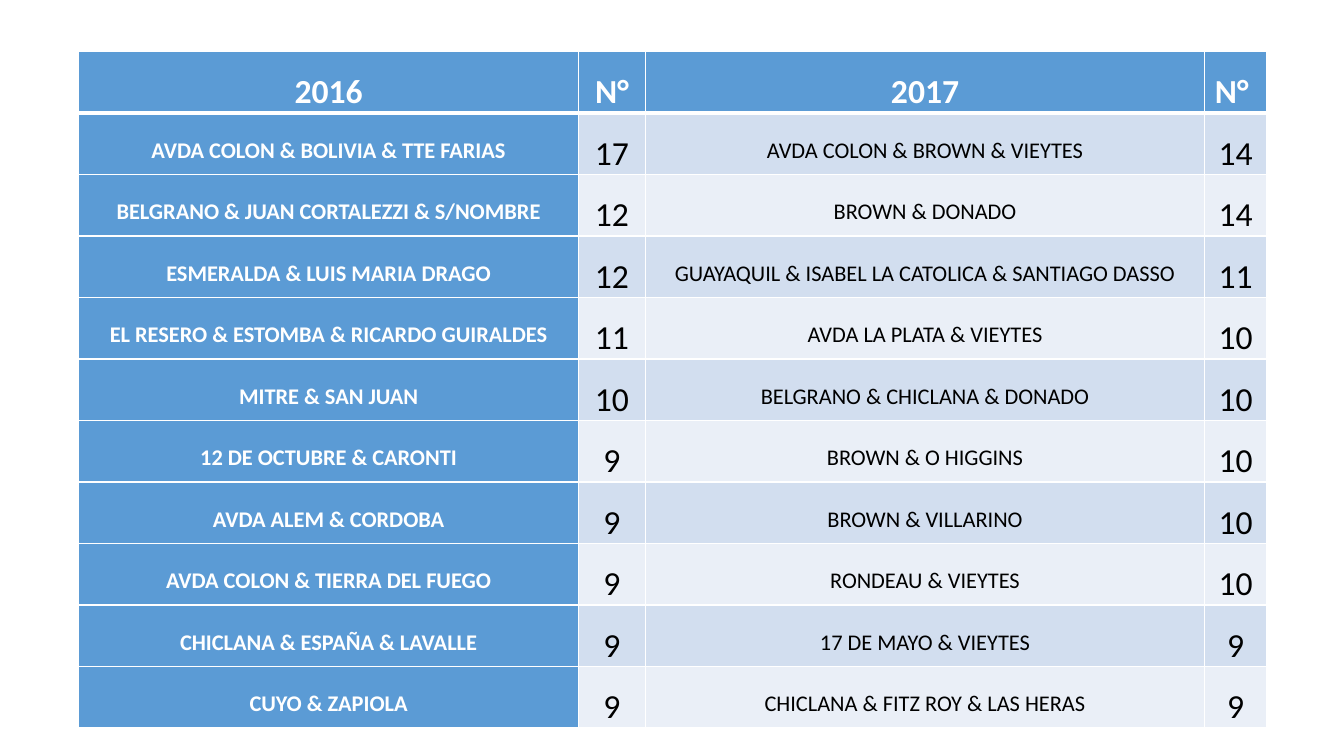
from lxml import etree
from pptx import Presentation
from pptx.dml.color import RGBColor
from pptx.enum import text
from pptx.oxml import ns
from pptx.util import Inches, Pt

COLORS = {"white": "FFFFFF", "black": "000000", "head": "5B9BD5",
          "odd": "D2DEEF", "even": "EAEFF7"}
COL_WIDTHS = [4.96, 0.66, 5.55, 0.61]
HEADER = ("2016", "N°", "2017", "N° ")
CORNERS = [
    ("AVDA COLON & BOLIVIA & TTE FARIAS", 17, "AVDA COLON & BROWN & VIEYTES", 14),
    ("BELGRANO & JUAN CORTALEZZI & S/NOMBRE", 12, "BROWN & DONADO", 14),
    ("ESMERALDA & LUIS MARIA DRAGO", 12,
     "GUAYAQUIL & ISABEL LA CATOLICA & SANTIAGO DASSO", 11),
    ("EL RESERO & ESTOMBA & RICARDO GUIRALDES", 11, "AVDA LA PLATA & VIEYTES", 10),
    ("MITRE & SAN JUAN", 10, "BELGRANO & CHICLANA & DONADO", 10),
    ("12 DE OCTUBRE & CARONTI", 9, "BROWN & O HIGGINS", 10),
    ("AVDA ALEM & CORDOBA", 9, "BROWN & VILLARINO", 10),
    ("AVDA COLON & TIERRA DEL FUEGO", 9, "RONDEAU & VIEYTES", 10),
    ("CHICLANA & ESPAÑA & LAVALLE", 9, "17 DE MAYO & VIEYTES", 9),
    ("CUYO & ZAPIOLA", 9, "CHICLANA & FITZ ROY & LAS HERAS", 9),
]


def rgb(name):
    return RGBColor.from_string(COLORS[name])


def set_attrs(obj, values):
    for name, value in values.items():
        setattr(obj, name, value)


def add_borders(cell, widths):
    tc_pr = cell._tc.get_or_add_tcPr()
    for i, (side, width) in enumerate(widths.items()):
        ln = etree.Element(ns.qn(f"a:ln{side}"), w=str(Pt(width)))
        fill = etree.SubElement(ln, ns.qn("a:solidFill"))
        etree.SubElement(fill, ns.qn("a:srgbClr"), val=COLORS["white"])
        tc_pr.insert(i, ln)


def fill_cell(cell, value, row, col):
    is_header = row == 0
    is_dark = is_header or col == 0
    is_large = is_header or col % 2 == 1
    anchor = text.MSO_ANCHOR.BOTTOM if is_header else text.MSO_ANCHOR.MIDDLE
    set_attrs(cell, {"margin_left": Inches(0.05), "margin_right": Inches(0.05),
                     "margin_top": 0, "margin_bottom": 0,
                     "vertical_anchor": anchor})
    add_borders(cell, {"L": 1, "R": 1, "T": 3 if row == 1 else 1,
                       "B": 3 if is_header else 1})
    cell.fill.solid()
    band = "odd" if row % 2 else "even"
    cell.fill.fore_color.rgb = rgb("head" if is_dark else band)
    p = cell.text_frame.paragraphs[0]
    set_attrs(p, {"alignment": text.PP_ALIGN.CENTER, "line_spacing": 1.5})
    r = p.add_run()
    r.text = str(value)
    set_attrs(r.font, {"name": "Calibri", "size": Pt(24 if is_large else 16),
                       "bold": is_dark})
    r.font.color.rgb = rgb("white" if is_dark else "black")


def add_corner_table(s, left, top, width, height):
    rows = [HEADER, *CORNERS]
    table = s.shapes.add_table(len(rows), len(HEADER), Inches(left), Inches(top),
                               Inches(width), Inches(height)).table
    for column, share in zip(table.columns, COL_WIDTHS):
        column.width = Inches(width * share / sum(COL_WIDTHS))
    for row, values in enumerate(rows):
        for col, value in enumerate(values):
            fill_cell(table.cell(row, col), value, row, col)


def main():
    prs = Presentation()
    set_attrs(prs, {"slide_width": Inches(13.33), "slide_height": Inches(7.5)})
    s = prs.slides.add_slide(prs.slide_layouts[6])
    add_corner_table(s, 0.78, 0.51, 11.78, 6.6)
    prs.save("out.pptx")


if __name__ == "__main__":
    main()
